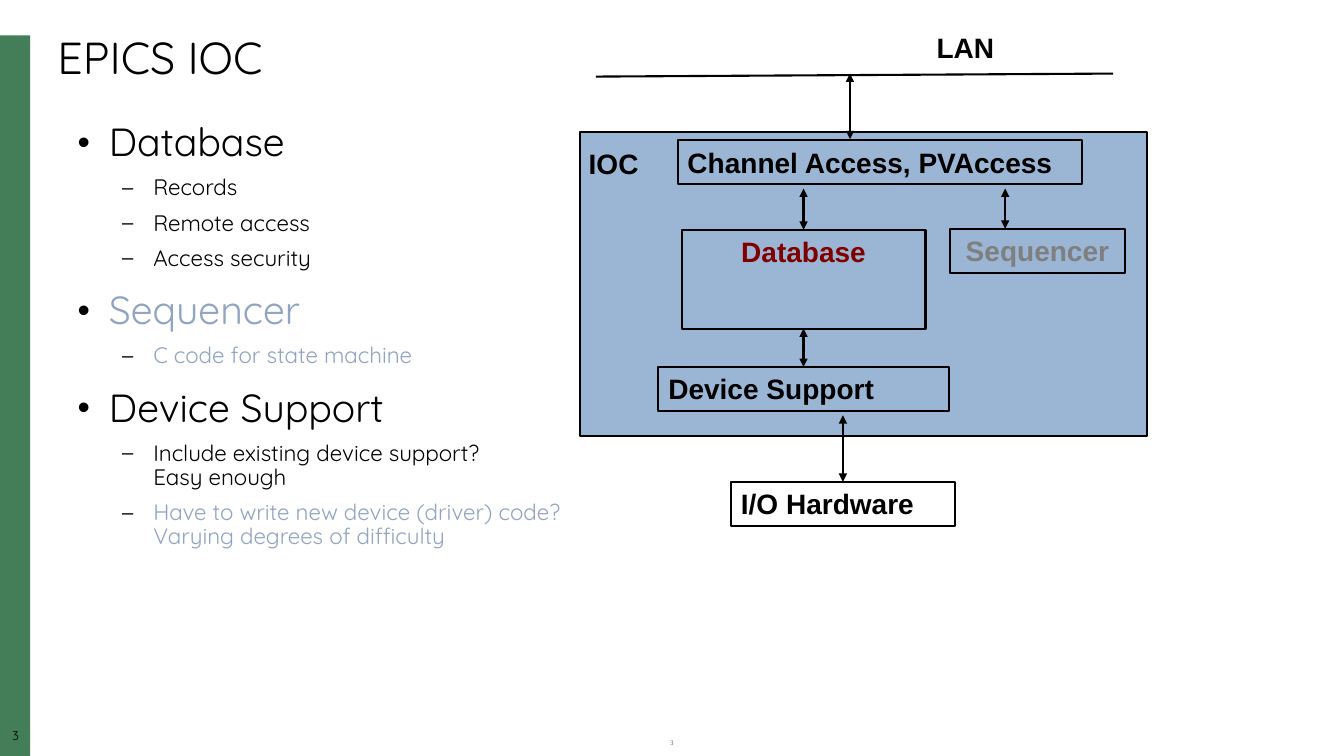
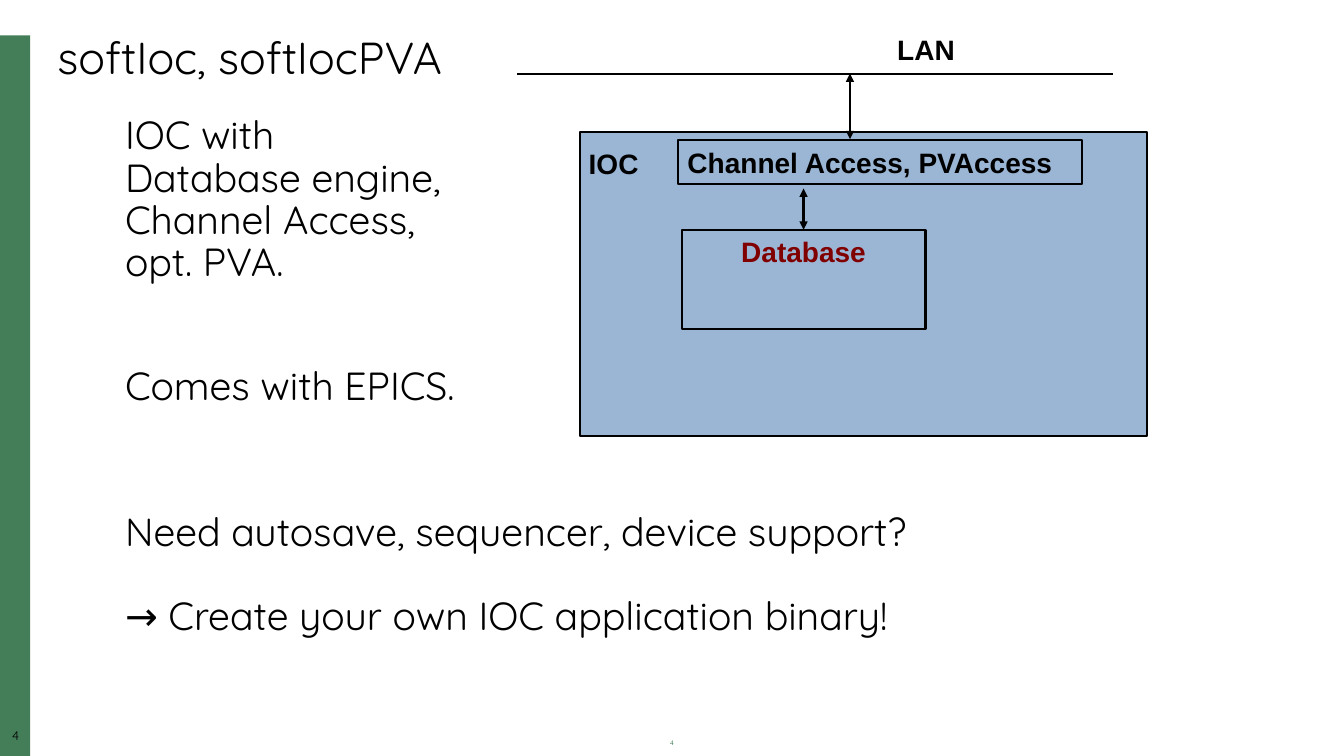
from lxml import etree
from pptx import Presentation
from pptx.dml.color import RGBColor
from pptx.enum.shapes import MSO_CONNECTOR, MSO_SHAPE
from pptx.enum.text import MSO_ANCHOR, MSO_AUTO_SIZE, PP_ALIGN
from pptx.oxml.ns import qn
from pptx.util import Pt

SCALE = 9144
GREEN = RGBColor(0x44, 0x7E, 0x59)
BLACK = RGBColor(0, 0, 0)
IOC_BLUE = RGBColor(0x9A, 0xB6, 0xD4)
MUTED_BLUE = RGBColor(0x91, 0xA4, 0xC1)
MAROON = RGBColor(0x80, 0, 0)
GRAY = RGBColor(0x7F, 0x7F, 0x7F)
BODY_FONT = "Quicksand"
DIAGRAM_FONT = "Arial"
NUMBER_FONT = "Times New Roman"
LEFT, CENTER = PP_ALIGN.LEFT, PP_ALIGN.CENTER
TOP = MSO_ANCHOR.TOP
NO_AUTOFIT = MSO_AUTO_SIZE.NONE
RECTANGLE = MSO_SHAPE.RECTANGLE
STRAIGHT = MSO_CONNECTOR.STRAIGHT
TOP_SIDE, BOTTOM_SIDE = 0, 2
LINE_WIDTH = Pt(1.5)
LINE_SPACING = 0.9
DIAGRAM_BOX = (575, 131, 563, 302)


def px(*lengths):
    return [length * SCALE for length in lengths]


def set_font(paragraph, name, size, color, bold=False):
    font = paragraph.font
    font.name, font.size, font.bold = name, Pt(size), bold
    font.color.rgb = color


def prepare_frame(shape, wrap=True):
    frame = shape.text_frame
    frame.word_wrap = wrap
    frame.auto_size = NO_AUTOFIT
    frame.vertical_anchor = TOP
    return frame


def move(shape, box):
    shape.left, shape.top, shape.width, shape.height = px(*box)


def add_rectangle(slide, box, fill=None, outlined=True):
    shape = slide.shapes.add_shape(RECTANGLE, *px(*box))
    shape.shadow.inherit = False
    if fill is None:
        shape.fill.background()
    else:
        shape.fill.solid()
        shape.fill.fore_color.rgb = fill
    if outlined:
        shape.line.color.rgb = BLACK
        shape.line.width = LINE_WIDTH
    else:
        shape.line.fill.background()
    return shape


def write_label(shape, text, color=BLACK, alignment=LEFT, wrap=True):
    paragraph = prepare_frame(shape, wrap).paragraphs[0]
    paragraph.text = text
    paragraph.alignment = alignment
    set_font(paragraph, DIAGRAM_FONT, 20, color, bold=True)


def add_line(slide, start, end, arrows=True):
    connector = slide.shapes.add_connector(STRAIGHT, *px(*start, *end))
    connector.line.color.rgb = BLACK
    connector.line.width = LINE_WIDTH
    if arrows:
        outline = connector.line._get_or_add_ln()
        for tag in ("a:headEnd", "a:tailEnd"):
            etree.SubElement(outline, qn(tag), type="triangle")
    etree.SubElement(connector.element.spPr, qn("a:effectLst"))
    return connector


def add_number(slide, number, box, font_name, size, color, margin=None):
    shape = slide.shapes.add_textbox(*px(*box))
    frame = prepare_frame(shape)
    if margin is not None:
        frame.margin_left = frame.margin_right = margin
        frame.margin_top = frame.margin_bottom = margin
    paragraph = frame.paragraphs[0]
    paragraph.text = str(number)
    paragraph.alignment = CENTER
    paragraph.line_spacing = LINE_SPACING
    set_font(paragraph, font_name, size, color)


def add_side_band(layout, slide):
    band = add_rectangle(slide, (0, 35, 30, 715), GREEN, outlined=False)
    band.element.nvSpPr.cNvPr.set("id", "99")
    layout.shapes.element.insert(2, band.element)


def start_slide(presentation, layout, title, number):
    slide = presentation.slides.add_slide(layout)
    move(slide.shapes.title, (47, 30, 1250, 59))
    paragraph = prepare_frame(slide.shapes.title).paragraphs[0]
    paragraph.text = title
    paragraph.alignment = LEFT
    paragraph.line_spacing = LINE_SPACING
    set_font(paragraph, BODY_FONT, 32, BLACK)
    add_number(slide, number, (0, 724, 31, 17), BODY_FONT, 9, BLACK, margin=0)
    add_number(slide, number, (508, 729, 317, 20), NUMBER_FONT, 5, GREEN)
    return slide


def set_bullet(paragraph, character, indent, hanging):
    properties = paragraph._p.get_or_add_pPr()
    properties.set("marL", str(indent * SCALE))
    properties.set("indent", str(-hanging * SCALE))
    if character is None:
        etree.SubElement(properties, qn("a:buNone"))
        return
    color = etree.SubElement(properties, qn("a:buClr"))
    etree.SubElement(color, qn("a:srgbClr"), val=str(BLACK))
    etree.SubElement(properties, qn("a:buSzPct"), val="90000")
    etree.SubElement(properties, qn("a:buChar"), char=character)


def body_paragraphs(slide, box, texts):
    body = slide.placeholders[1]
    move(body, box)
    frame = prepare_frame(body)
    for index, text in enumerate(texts):
        paragraph = frame.add_paragraph() if index else frame.paragraphs[0]
        paragraph.text = text
        paragraph.alignment = LEFT
        paragraph.line_spacing = LINE_SPACING
        yield paragraph


def fill_bullets(slide, box, items):
    paragraphs = body_paragraphs(slide, box, [text for _, text, _ in items])
    for index, (paragraph, (level, _, color)) in enumerate(zip(paragraphs, items)):
        character, indent, size, space = (("•", 31, 28, 14), ("–", 75, 16, 8))[level]
        paragraph.level = level
        set_bullet(paragraph, character, indent, 31)
        paragraph.space_before = Pt(space if index else 0)
        set_font(paragraph, BODY_FONT, size, color)


def fill_statements(slide, box, statements):
    paragraphs = body_paragraphs(slide, box, [text for text, _ in statements])
    for paragraph, (_, space) in zip(paragraphs, statements):
        set_bullet(paragraph, None, 0, 0)
        paragraph.space_before = Pt(space)
        set_font(paragraph, BODY_FONT, 28, BLACK)


def add_ioc_diagram(slide, box, lan_start, lan_label):
    left, top, _, _ = box

    def place(x, y, width, height):
        return left + x, top + y, width, height

    def point(x, y):
        return left + x, top + y

    add_rectangle(slide, box, IOC_BLUE)
    add_line(slide, point(*lan_start), point(529, -58), arrows=False)
    for text, position, wrap in (
        ("LAN", (*lan_label, 78, 44), False),
        ("IOC", (-1, 9, 91, 44), True),
    ):
        label = slide.shapes.add_textbox(*px(*place(*position)))
        write_label(label, text, wrap=wrap)
    access = add_rectangle(slide, place(97, 8, 401, 44))
    write_label(access, "Channel Access, PVAccess")
    database = add_rectangle(slide, place(101, 97, 242, 98))
    write_label(database, "Database", MAROON, CENTER)
    add_line(slide, point(268, -58), point(268, 7))
    arrow = add_line(slide, point(222, 56), point(222, 97))
    arrow.end_connect(database, TOP_SIDE)
    return database


def add_device_parts(slide, box, database):
    left, top, _, _ = box
    parts = {}
    for text, x, y, width, color, alignment in (
        ("Sequencer", 367, 96, 174, GRAY, CENTER),
        ("Device Support", 78, 233, 288, BLACK, LEFT),
        ("I/O Hardware", 150, 347, 222, BLACK, LEFT),
    ):
        parts[text] = add_rectangle(slide, (left + x, top + y, width, 44))
        write_label(parts[text], text, color, alignment)
    add_line(slide, (left + 422, top + 56), (left + 422, top + 96))
    support_arrow = add_line(slide, (left + 222, top + 195), (left + 222, top + 233))
    support_arrow.begin_connect(database, BOTTOM_SIDE)
    support_arrow.end_connect(parts["Device Support"], TOP_SIDE)
    hardware_arrow = add_line(slide, (left + 261, top + 281), (left + 261, top + 347))
    hardware_arrow.end_connect(parts["I/O Hardware"], TOP_SIDE)


def build_epics_slide(presentation, layout):
    slide = start_slide(presentation, layout, "EPICS IOC", 3)
    fill_bullets(slide, (67, 117, 539, 633), [
        (0, "Database", BLACK),
        (1, "Records", BLACK),
        (1, "Remote access", BLACK),
        (1, "Access security", BLACK),
        (0, "Sequencer", MUTED_BLUE),
        (1, "C code for state machine", MUTED_BLUE),
        (0, "Device Support", BLACK),
        (1, "Include existing device support?\vEasy enough", BLACK),
        (1, "Have to write new device (driver) code? Varying degrees of difficulty",
         MUTED_BLUE),
    ])
    database = add_ioc_diagram(slide, DIAGRAM_BOX, (16, -55), (344, -106))
    add_device_parts(slide, DIAGRAM_BOX, database)
    return slide


def build_soft_ioc_slide(presentation, layout):
    slide = start_slide(presentation, layout, "softIoc, softIocPVA", 4)
    fill_statements(slide, (114, 110, 921, 629), [
        ("IOC with\vDatabase engine,\vChannel Access,\vopt. PVA.", 0),
        ("Comes with EPICS.", 58),
        ("Need autosave, sequencer, device support?", 74),
        ("→ Create your own IOC application binary!", 30),
    ])
    add_ioc_diagram(slide, DIAGRAM_BOX, (-62, -58), (305, -104))


def main():
    presentation = Presentation()
    presentation.slide_width, presentation.slide_height = px(1333, 750)
    layout = presentation.slide_layouts[1]
    first_slide = build_epics_slide(presentation, layout)
    add_side_band(layout, first_slide)
    build_soft_ioc_slide(presentation, layout)
    presentation.save("out.pptx")


if __name__ == "__main__":
    main()
